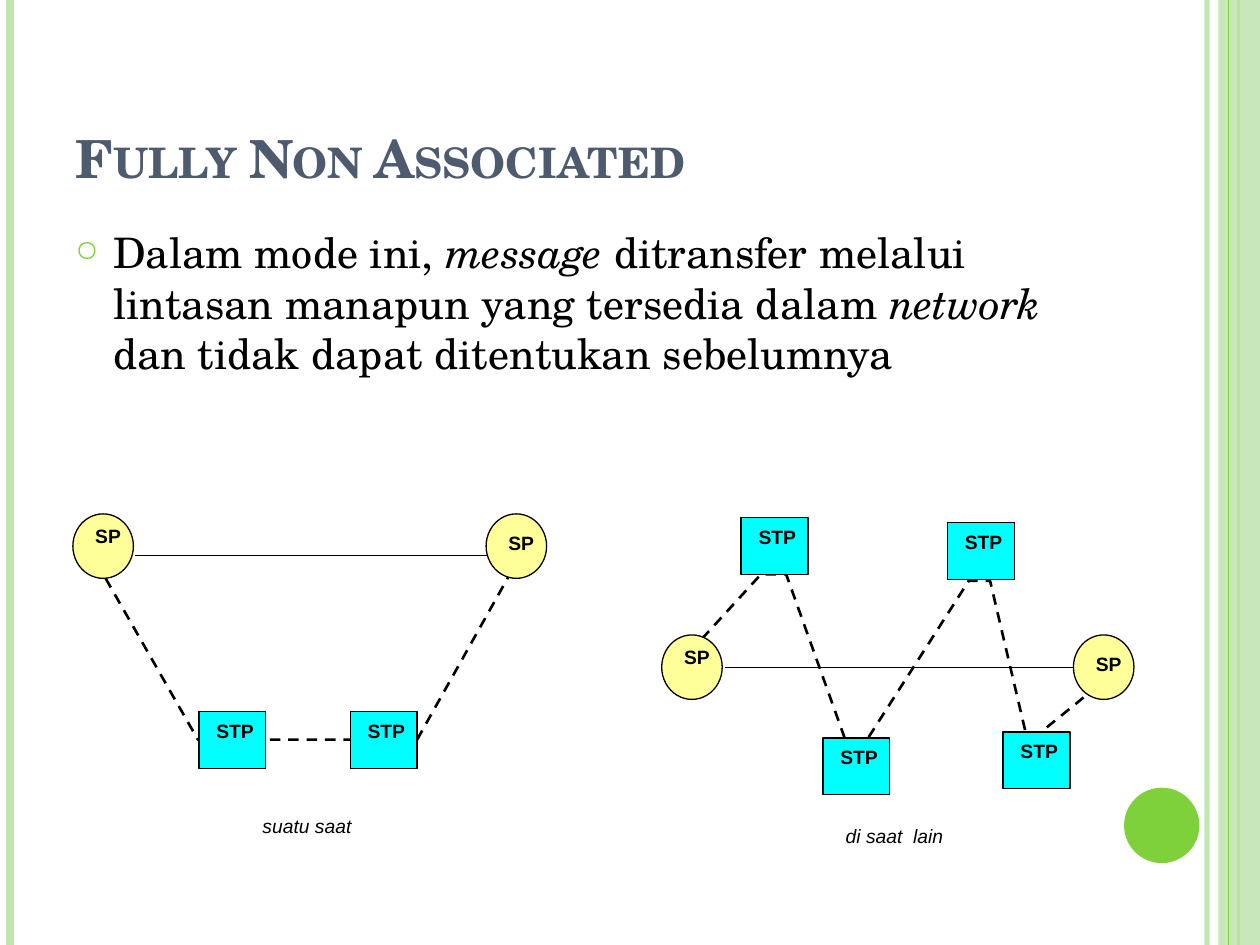
from lxml import etree
from pptx import Presentation
from pptx.dml.color import RGBColor
from pptx.enum.dml import MSO_LINE
from pptx.enum.shapes import MSO_CONNECTOR, MSO_SHAPE
from pptx.enum.text import MSO_ANCHOR, PP_ALIGN
from pptx.oxml.ns import qn
from pptx.util import Cm, Pt

STRAIGHT = MSO_CONNECTOR.STRAIGHT
RECT, OVAL = MSO_SHAPE.RECTANGLE, MSO_SHAPE.OVAL
DASH = MSO_LINE.DASH
TOP, BOTTOM = MSO_ANCHOR.TOP, MSO_ANCHOR.BOTTOM
LEFT, CENTER = PP_ALIGN.LEFT, PP_ALIGN.CENTER

COLORS = {name: RGBColor.from_string(value) for name, value in {
    "pale": "C0E5AF", "green": "7FD13B", "title": "4E5B6F",
    "black": "000000", "sp": "FFFF99", "stp": "00FFFF",
}.items()}
SERIF, SANS = "TeX Gyre Schola", "Arial"

prs = Presentation()
prs.slide_width, prs.slide_height = Cm(25.4), Cm(19.05)
s = prs.slides.add_slide(prs.slide_layouts[5])


def add_line(x1, y1, x2, y2, color, width):
    ln = s.shapes.add_connector(STRAIGHT, Cm(x1), Cm(y1), Cm(x2), Cm(y2))
    ln.line.color.rgb = COLORS[color]
    ln.line.width = Pt(width)
    etree.SubElement(ln._element.spPr, qn("a:effectLst"))
    return ln


def add_label(text, x, y, w, h, **style):
    """Add a small centred text box for a node name or a caption."""
    tf = s.shapes.add_textbox(Cm(x), Cm(y), Cm(w), Cm(h)).text_frame
    tf.word_wrap = True
    for side in ("left", "top", "right", "bottom"):
        setattr(tf, f"margin_{side}", Cm(0.05))
    p = tf.paragraphs[0]
    p.alignment, p.space_after = CENTER, Pt(10)
    r = p.add_run()
    r.text = text
    for name, value in {"name": SANS, "size": Pt(11), **style}.items():
        setattr(r.font, name, value)
    r.font.color.rgb = COLORS["black"]


# Side bands and corner disc
edge = add_line(24.33, 0, 24.33, 19.05, "pale", 3)
etree.SubElement(edge._element.spPr.find(".//" + qn("a:srgbClr")), qn("a:alpha"), val="93000")
add_line(0.2, 0, 0.2, 19.05, "pale", 4.5)
add_line(24.97, 0, 24.97, 19.05, "green", 1.5)
band = s.shapes.add_shape(RECT, Cm(24.56), Cm(0), Cm(0.84), Cm(19.05))
add_line(24.77, 0, 24.77, 19.05, "green", 0.75)
disc = s.shapes.add_shape(OVAL, Cm(22.66), Cm(15.88), Cm(1.52), Cm(1.52))
for sp, color in ((band, "pale"), (disc, "green")):
    sp.shadow.inherit = False
    sp.fill.solid()
    sp.fill.fore_color.rgb = COLORS[color]
    sp.line.fill.background()
etree.SubElement(band._element.spPr.find(".//" + qn("a:srgbClr")), qn("a:alpha"), val="87000")

# Title
title = s.shapes.title
title.left, title.top, title.width, title.height = Cm(1.27), Cm(0.76), Cm(20.75), Cm(3.18)
tf = title.text_frame
tf.vertical_anchor = BOTTOM
p = tf.paragraphs[0]
p.alignment = LEFT
r = p.add_run()
r.text = "Fully Non Associated"
for name, value in {"name": SERIF, "size": Pt(30), "bold": True}.items():
    setattr(r.font, name, value)
r.font.color.rgb = COLORS["title"]
r.font._element.set("cap", "small")

# Bulleted description
tf = s.shapes.add_textbox(Cm(1.27), Cm(4.45), Cm(20.75), Cm(13.54)).text_frame
tf.word_wrap = True
tf.vertical_anchor = TOP
p = tf.paragraphs[0]
p.space_before = Pt(6)
pPr = p._p.get_or_add_pPr()
pPr.set("marL", str(Cm(0.76)))
pPr.set("indent", str(Cm(-0.76)))
bullet_color = etree.SubElement(pPr, qn("a:buClr"))
etree.SubElement(bullet_color, qn("a:srgbClr"), val=str(COLORS["green"]))
etree.SubElement(pPr, qn("a:buSzPct"), val="70000")
etree.SubElement(pPr, qn("a:buChar"), char="○")
for text, italic in (
    ("Dalam mode ini, ", False),
    ("message ", True),
    ("ditransfer melalui lintasan manapun yang tersedia dalam ", False),
    ("network ", True),
    ("dan tidak dapat ditentukan sebelumnya", False),
):
    r = p.add_run()
    r.text = text
    for name, value in {"name": SERIF, "size": Pt(24), "italic": italic}.items():
        setattr(r.font, name, value)
    r.font.color.rgb = COLORS["black"]

# Node kinds: preset, size, label size
KINDS = {
    "SP": (OVAL, 1.22, 1.3, 1.02, 1.0),
    "STP": (RECT, 1.35, 1.14, 1.7, 0.97),
}
# Each network: dashed route, direct trunk, nodes (kind, x, y, label dx, label dy), caption
networks = [
    {
        "route": [(2.13, 11.66), (3.99, 14.91), (8.41, 14.91), (10.26, 11.61)],
        "trunk": (2.72, 11.2, 9.88, 11.2),
        "nodes": [
            ("SP", 1.47, 10.36, 0.2, 0.15), ("SP", 9.8, 10.36, 0.2, 0.3),
            ("STP", 4.01, 14.35, -0.12, 0.1), ("STP", 7.06, 14.35, -0.12, 0.1),
        ],
        "caption": ("suatu saat", 4.55, 16.36, 3.28, 0.97),
    },
    {
        "route": [
            (14.15, 12.88), (15.34, 11.58), (15.85, 11.58), (17.04, 14.91), (17.48, 14.91),
            (19.53, 11.71), (19.96, 11.71), (20.68, 14.78), (20.96, 14.78), (21.92, 14.0),
        ],
        "trunk": (14.61, 13.46, 21.77, 13.46),
        "nodes": [
            ("SP", 13.34, 12.8, 0.2, 0.15), ("SP", 21.64, 12.8, 0.2, 0.3),
            ("STP", 14.94, 10.44, -0.12, 0.1), ("STP", 16.59, 14.88, -0.12, 0.1),
            ("STP", 19.1, 10.54, -0.12, 0.1), ("STP", 20.22, 14.76, -0.12, 0.1),
        ],
        "caption": ("di saat  lain", 16.13, 16.56, 3.81, 1.02),
    },
]

for network in networks:
    points = [(Cm(x), Cm(y)) for x, y in network["route"]]
    builder = s.shapes.build_freeform(*points[0])
    builder.add_line_segments(points[1:], close=False)
    route = builder.convert_to_shape()
    route.shadow.inherit = False
    route.fill.background()
    route.line.color.rgb = COLORS["black"]
    route.line.width = Pt(1.5)
    route.line.dash_style = DASH

    add_line(*network["trunk"], "black", 0.75)
    for kind, x, y, dx, dy in network["nodes"]:
        preset, w, h, label_w, label_h = KINDS[kind]
        sp = s.shapes.add_shape(preset, Cm(x), Cm(y), Cm(w), Cm(h))
        sp.shadow.inherit = False
        sp.fill.solid()
        sp.fill.fore_color.rgb = COLORS[kind.lower()]
        sp.line.color.rgb = COLORS["black"]
        sp.line.width = Pt(0.75)
        add_label(kind, x + dx, y + dy, label_w, label_h, bold=True)
    add_label(*network["caption"], italic=True)

prs.save("out.pptx")
